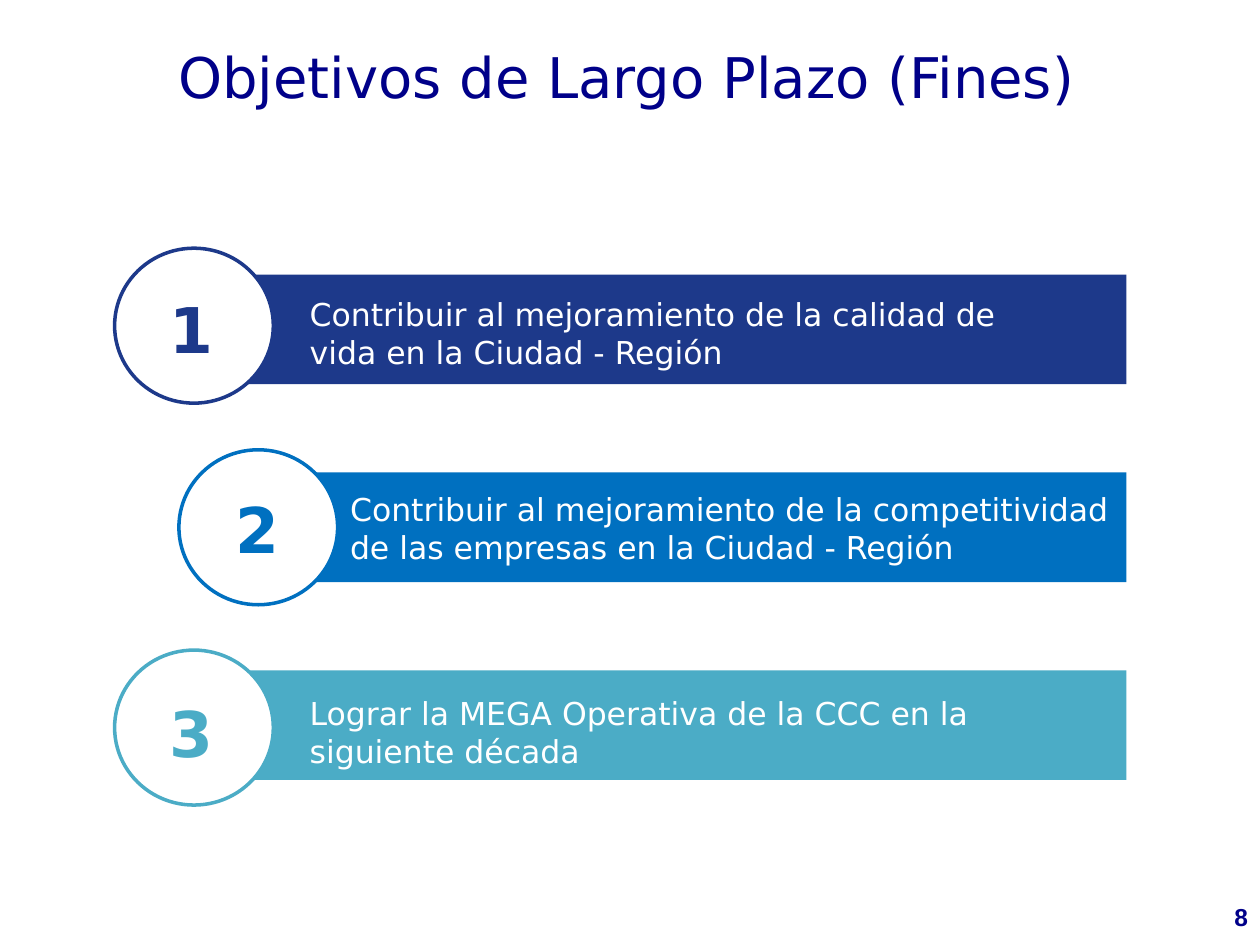
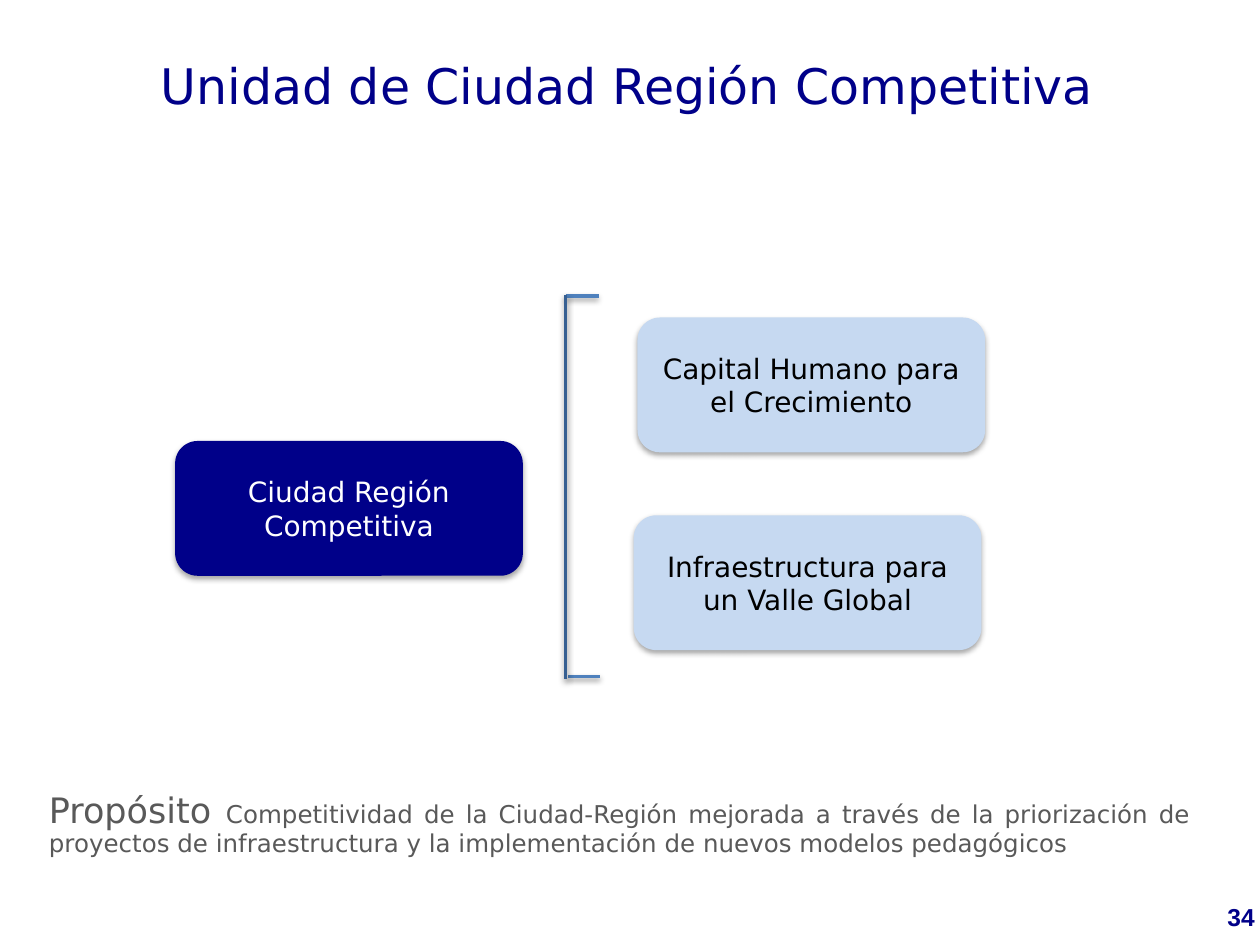
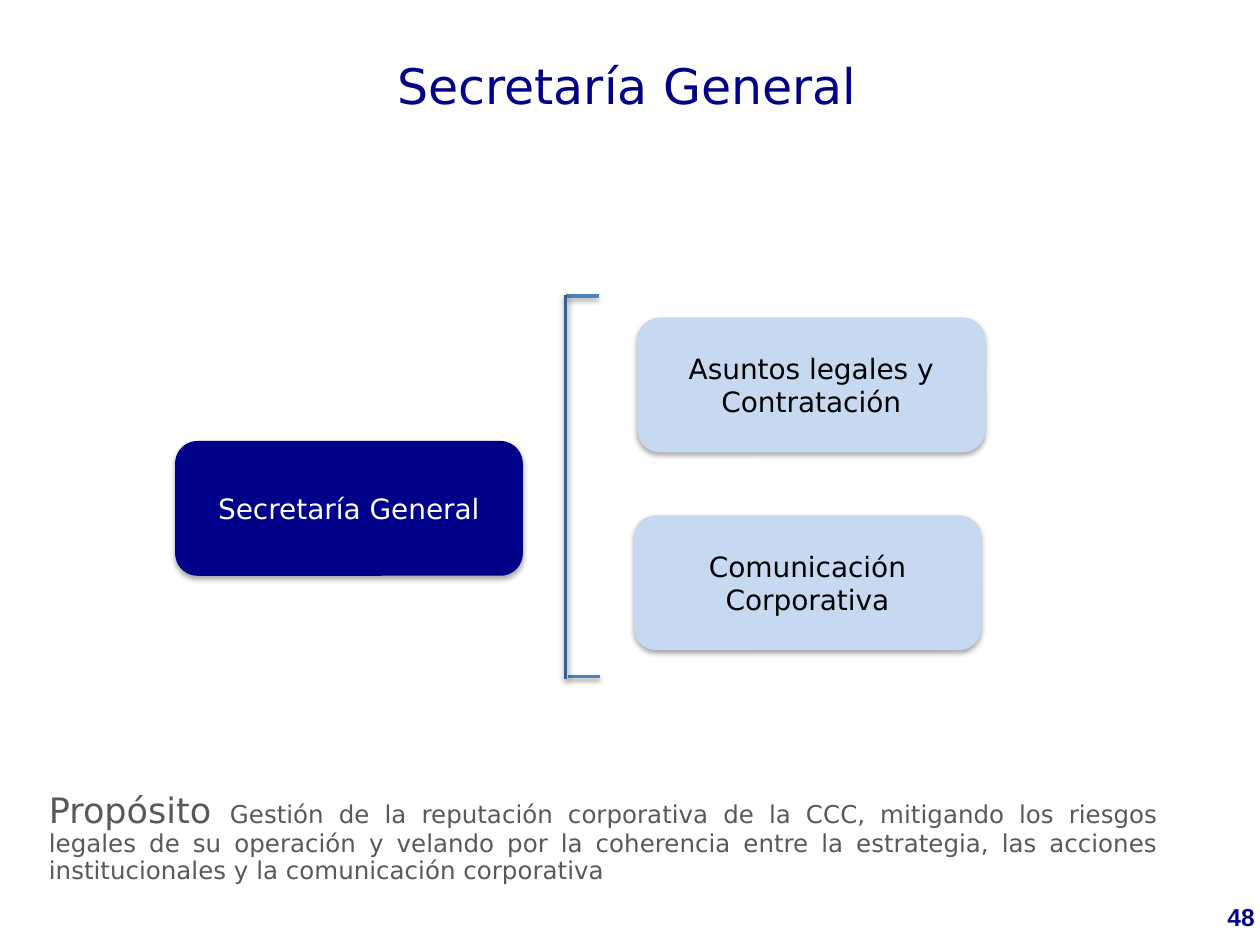
from dataclasses import dataclass

from lxml import etree
from pptx import Presentation
from pptx import util as u
from pptx.dml.color import RGBColor
from pptx.enum import shapes, text
from pptx.oxml.ns import qn

EMU_PER_PX = 9144
SHAPE = shapes.MSO_SHAPE
ALIGN = text.PP_ALIGN
ANCHOR = text.MSO_ANCHOR


@dataclass(frozen=True)
class Theme:
    """Colours, fonts and type sizes of the deck."""
    navy: str = "000089"
    royal: str = "1D398A"
    blue: str = "0070C0"
    teal: str = "4BACC6"
    pale: str = "C6D9F1"
    bracket: str = "376092"
    bracket_arm: str = "4F81BD"
    grey: str = "595959"
    black: str = "000000"
    white: str = "FFFFFF"
    font: str = "DejaVu Sans"
    page_font: str = "Arial"
    goals_title: int = 32
    unit_title: int = 28
    numeral: int = 36
    goal: int = 18
    box: int = 16
    purpose_label: int = 20
    small: int = 14
    line: int = 2


T = Theme()


@dataclass(frozen=True)
class Goal:
    """A numbered goal, with the places of its circle and texts."""
    wording: str
    color: str
    circle: tuple
    numeral: tuple
    label: tuple


GOALS = [
    Goal("Contribuir al mejoramiento de la calidad de vida en la Ciudad - Región",
         T.royal, (91, 197), (125, 226), (236, 229, 606)),
    Goal("Contribuir al mejoramiento de la competitividad de las empresas en la Ciudad - Región",
         T.blue, (142, 357), (177, 384), (268, 384, 626)),
    Goal("Lograr la MEGA Operativa de la CCC en la siguiente década",
         T.teal, (91, 516), (125, 546), (236, 546, 606)),
]


def px(*lengths):
    """Turn px lengths into EMU."""
    return [u.Emu(n * EMU_PER_PX) for n in lengths]


def rgb(color):
    """Return the colour object of a hex code."""
    return RGBColor.from_string(color)


def add_run(p, wording, size, color, bold=False, font=T.font):
    """Append a formatted run to a paragraph."""
    r = p.add_run()
    r.text = wording
    r.font.name, r.font.size, r.font.bold = font, u.Pt(size), bold
    r.font.color.rgb = rgb(color)


def first_paragraph(sp, align, anchor=ANCHOR.TOP, spacing=None):
    """Prepare a wrapping text frame and return its paragraph."""
    tf = sp.text_frame
    tf.auto_size = text.MSO_AUTO_SIZE.NONE
    tf.word_wrap = True
    tf.vertical_anchor = anchor
    p = tf.paragraphs[0]
    p.alignment = align
    p.line_spacing = spacing
    return p


def add_text_box(s, box, align=ALIGN.LEFT, spacing=None):
    """Add a text box and return its paragraph."""
    return first_paragraph(s.shapes.add_textbox(*px(*box)), align, spacing=spacing)


def set_shadow(sp, alpha=None, distance=0):
    """Give a shape a soft shadow below, or none when alpha is missing."""
    effects = etree.SubElement(sp._element.spPr, qn("a:effectLst"))
    if alpha:
        shadow = etree.SubElement(effects, qn("a:outerShdw"), blurRad="40000",
                                  dist=str(distance), dir="5400000", rotWithShape="0")
        color = etree.SubElement(shadow, qn("a:srgbClr"), val=T.black)
        etree.SubElement(color, qn("a:alpha"), val=str(alpha * 1000))


def add_filled(s, kind, box, fill, outline=None, **shadow):
    """Add a preset shape with a plain fill."""
    sp = s.shapes.add_shape(kind, *px(*box))
    sp.fill.solid()
    sp.fill.fore_color.rgb = rgb(fill)
    if outline:
        sp.line.color.rgb = rgb(outline)
        sp.line.width = u.Pt(T.line)
    else:
        sp.line.fill.background()
    set_shadow(sp, **shadow)
    return sp


def add_unit_box(s, left, top, wording, fill, color):
    """Add a rounded box of the unit diagram."""
    sp = add_filled(s, SHAPE.ROUNDED_RECTANGLE, (left, top, 276, 107), fill,
                    alpha=35, distance=23000)
    add_run(first_paragraph(sp, ALIGN.CENTER, ANCHOR.MIDDLE), wording, T.box, color)


def add_line(s, ends, color):
    """Add a shadowed straight line."""
    line = s.shapes.add_connector(shapes.MSO_CONNECTOR.STRAIGHT, *px(*ends))
    line.line.color.rgb = rgb(color)
    line.line.width = u.Pt(T.line)
    set_shadow(line, alpha=38, distance=20000)


def add_bracket(s):
    """Add the bracket that gathers the areas of a unit."""
    add_line(s, (449, 235, 475, 235), T.bracket_arm)
    add_line(s, (476, 537, 451, 537), T.bracket_arm)
    add_line(s, (449, 234, 449, 539), T.bracket)


def add_slide(prs, title, size, top, height, page):
    """Add a slide with its title and page number."""
    s = prs.slides.add_slide(prs.slide_layouts[5])
    sp = s.shapes.title
    sp.left, sp.top, sp.width, sp.height = px(66, top, 863, height)
    add_run(first_paragraph(sp, ALIGN.CENTER, spacing=0.9), title, size, T.navy)
    p = add_text_box(s, (954, 711, 62, 34), ALIGN.CENTER)
    add_run(p, page, T.small, T.navy, bold=True, font=T.page_font)
    return s


def add_goals_slide(prs):
    """Add the slide of numbered long-term goals."""
    s = add_slide(prs, "Objetivos de Largo Plazo (Fines)", T.goals_title, 35, 59, "8")
    for i, goal in enumerate(GOALS):
        add_filled(s, SHAPE.RECTANGLE, (185, 218 + 157 * i, 709, 87), goal.color)
        add_filled(s, SHAPE.FLOWCHART_CONNECTOR, (*goal.circle, 126, 123), T.white, goal.color)
        p = add_text_box(s, (*goal.numeral, 39, 71))
        add_run(p, str(i + 1), T.numeral, goal.color, bold=True)
        add_run(add_text_box(s, (*goal.label, 71)), goal.wording, T.goal, T.white)


def add_unit_slide(prs, title, unit, areas, purpose, purpose_size, page):
    """Add a slide that splits a unit into two areas and states its purpose."""
    s = add_slide(prs, title, T.unit_title, 44, 53, page)
    add_bracket(s)
    add_unit_box(s, 139, 350, unit, T.navy, T.white)
    for (left, top), area in zip([(506, 252), (503, 409)], areas):
        add_unit_box(s, left, top, area, T.pale, T.black)
    p = add_text_box(s, (29, 625, *purpose_size), ALIGN.JUSTIFY, 0.9)
    add_run(p, "Propósito ", T.purpose_label, T.grey)
    add_run(p, purpose, T.small, T.grey)


def main():
    """Build and save the deck."""
    prs = Presentation()
    prs.slide_width, prs.slide_height = px(1000, 750)
    add_goals_slide(prs)
    add_unit_slide(
        prs, "Unidad de Ciudad Región Competitiva", "Ciudad Región Competitiva",
        ["Capital Humano para el Crecimiento", "Infraestructura para un Valle Global"],
        "Competitividad de la Ciudad-Región mejorada a través de la priorización de "
        "proyectos de infraestructura y la implementación de nuevos modelos pedagógicos",
        (926, 62), "34")
    add_unit_slide(
        prs, "Secretaría General", "Secretaría General",
        ["Asuntos legales y Contratación", "Comunicación Corporativa"],
        "Gestión de la reputación corporativa de la CCC, mitigando los riesgos legales de "
        "su operación y velando por la coherencia entre la estrategia, las acciones "
        "institucionales y la comunicación corporativa",
        (900, 83), "48")
    prs.save("out.pptx")


if __name__ == "__main__":
    main()
